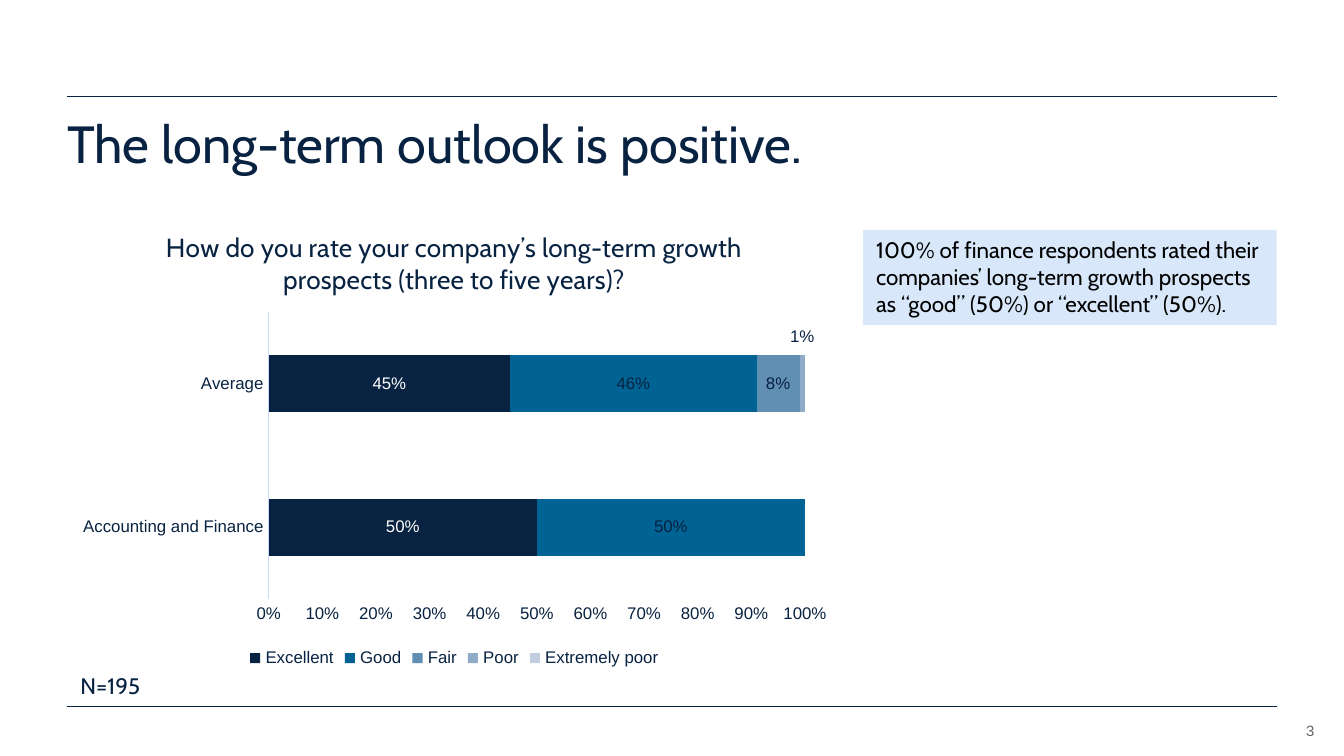
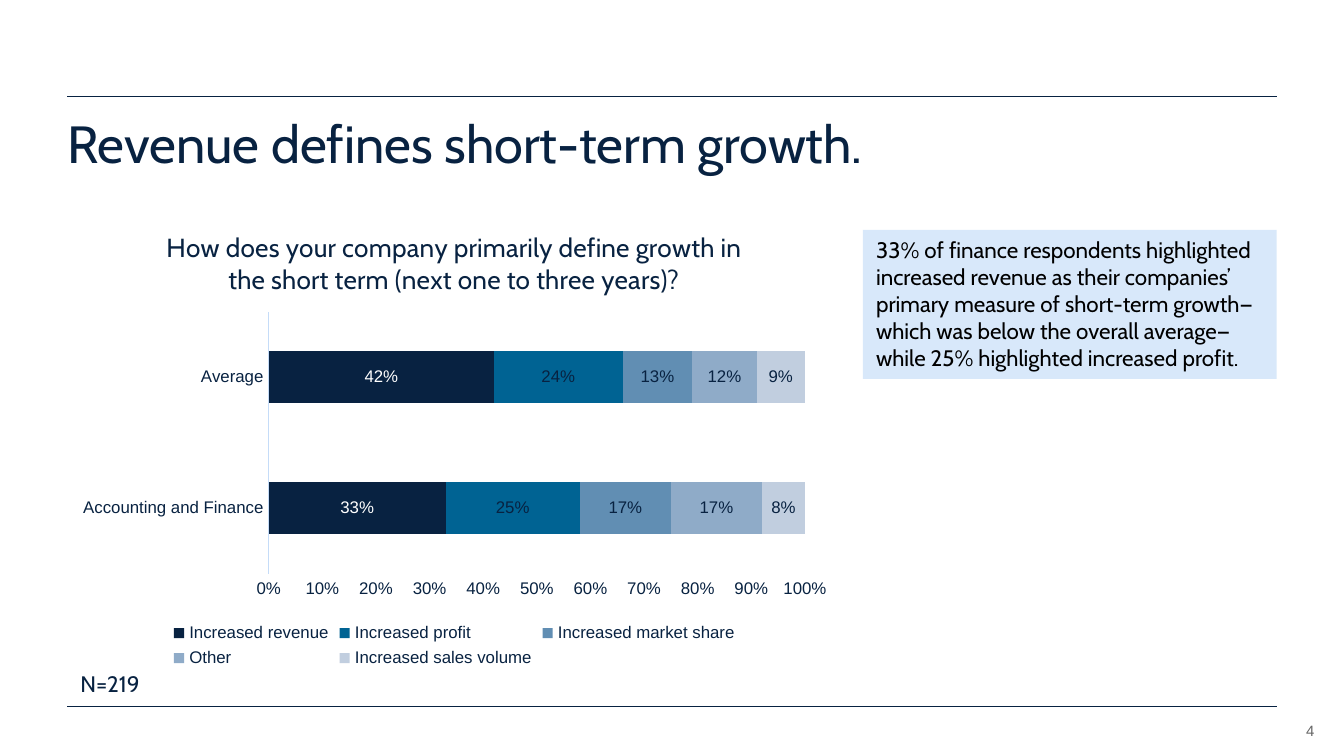
from dataclasses import dataclass

from lxml import etree
from pptx import Presentation
from pptx import util as u
from pptx.chart import data as chart_data
from pptx.dml.color import RGBColor
from pptx.enum import chart as ce
from pptx.enum import shapes, text
from pptx.oxml import parse_xml
from pptx.oxml.ns import nsdecls, qn


@dataclass(frozen=True)
class Theme:
    navy: str = "082241"
    white: str = "FFFFFF"
    black: str = "000000"
    grey: str = "666666"
    callout: str = "D8E8FA"
    axis: str = "C5DCF8"
    series: tuple = ("082241", "006393", "618EB3", "8FABC8", "C1CEDF")
    heading_font: str = "Cabin"
    label_font: str = "Arial"
    title_size: float = 28
    chart_title_size: float = 14
    body_size: float = 12
    chart_size: float = 10
    label_size: float = 9
    number_size: float = 8


THEME = Theme()
SLIDE_WIDTH = 10
SLIDE_HEIGHT = SLIDE_WIDTH * 9 / 16
LEFT, RIGHT = 0.5, 9.5
CHART_BOX = (LEFT, 1.55, 5.76, 3.46)
CATEGORIES = ("Accounting and Finance", "Average")

SLIDES = [
    dict(
        number=3,
        title="The long-term outlook is positive.",
        question="How do you rate your company’s long-term growth prospects (three to five years)?",
        series={
            "Excellent": (0.5, 0.45),
            "Good": (0.5, 0.46),
            "Fair": (None, 0.08),
            "Poor": (None, 0.01),
            "Extremely poor": (None, None),
        },
        plot_height=2.14,
        raised_label=("Poor", 1),
        callout="100% of finance respondents rated their companies’ long-term growth prospects "
                "as “good” (50%) or “excellent” (50%).",
        callout_height=0.71,
        sample="N=195",
        sample_top=4.95,
    ),
    dict(
        number=4,
        title="Revenue defines short-term growth.",
        question="How does your company primarily define growth in the short term "
                 "(next one to three years)?",
        series={
            "Increased revenue": (0.33, 0.42),
            "Increased profit": (0.25, 0.24),
            "Increased market share": (0.17, 0.13),
            "Other": (0.17, 0.12),
            "Increased sales volume": (0.08, 0.09),
        },
        plot_height=1.95,
        raised_label=None,
        callout="33% of finance respondents highlighted increased revenue as their companies’ "
                "primary measure of short-term growth—which was below the overall average—"
                "while 25% highlighted increased profit.",
        callout_height=1.11,
        sample="N=219",
        sample_top=4.94,
    ),
]


def inches(box):
    return [u.Inches(length) for length in box]


def rgb(color):
    return RGBColor.from_string(color)


def set_font(font, size=THEME.label_size, color=THEME.navy, name=THEME.label_font):
    font.size = u.Pt(size)
    font.bold = False
    font.name = name
    font.color.rgb = rgb(color)


def write_text(frame, content, size=THEME.body_size, color=THEME.navy,
               name=THEME.heading_font, align=text.PP_ALIGN.LEFT, line_spacing=None):
    paragraph = frame.paragraphs[0]
    paragraph.alignment = align
    paragraph.line_spacing = line_spacing
    run = paragraph.add_run()
    run.text = content
    set_font(run.font, size, color, name)


def set_frame(frame, anchor=text.MSO_ANCHOR.TOP, flush=False, grow=False):
    frame.word_wrap = True
    frame.vertical_anchor = anchor
    frame.auto_size = text.MSO_AUTO_SIZE.SHAPE_TO_FIT_TEXT if grow else text.MSO_AUTO_SIZE.NONE
    if flush:
        frame.margin_left = frame.margin_right = frame.margin_top = frame.margin_bottom = 0


def add_text_box(slide, box, content, anchor=text.MSO_ANCHOR.TOP, flush=False, grow=False, **style):
    frame = slide.shapes.add_textbox(*inches(box)).text_frame
    set_frame(frame, anchor, flush, grow)
    write_text(frame, content, **style)


def add_rule(slide, top):
    rule = slide.shapes.add_connector(
        shapes.MSO_CONNECTOR.STRAIGHT, *inches((LEFT, top, RIGHT, top)))
    rule.line.color.rgb = rgb(THEME.navy)
    rule.line.width = u.Pt(0.5)
    etree.SubElement(rule._element.spPr, qn("a:effectLst"))


def add_frame(slide, title, number):
    for top in (0.72, 5.26):
        add_rule(slide, top)
    add_text_box(slide, (9.31, 5.32, 0.47, 0.18), str(number), anchor=text.MSO_ANCHOR.BOTTOM,
                 flush=True, size=THEME.number_size, color=THEME.grey, name=THEME.label_font,
                 align=text.PP_ALIGN.RIGHT)
    heading = slide.shapes.title
    heading.left, heading.top, heading.width, heading.height = inches((LEFT, 0.88, RIGHT - LEFT, 0.55))
    set_frame(heading.text_frame, flush=True)
    write_text(heading.text_frame, title, size=THEME.title_size, line_spacing=0.9)


def manual_layout(**parts):
    values = "".join(f'<c:{part} val="{value}"/>' for part, value in parts.items())
    return parse_xml(
        f'<c:layout {nsdecls("c")}><c:manualLayout>{values}</c:manualLayout></c:layout>')


def place_plot(chart, box, left, top, width, height):
    plot_area = chart._chartSpace.find(".//" + qn("c:plotArea"))
    for layout in plot_area.findall(qn("c:layout")):
        plot_area.remove(layout)
    plot_area.insert(0, manual_layout(
        layoutTarget="inner", xMode="edge", yMode="edge",
        x=round(left / box[2], 4), y=round(top / box[3], 4),
        w=round(width / box[2], 4), h=round(height / box[3], 4)))


def format_axes(chart):
    for axis in (chart.category_axis, chart.value_axis):
        axis.has_major_gridlines = False
        axis.major_tick_mark = axis.minor_tick_mark = ce.XL_TICK_MARK.NONE
        set_font(axis.tick_labels.font)
    category_line = chart.category_axis.format.line
    category_line.color.rgb = rgb(THEME.axis)
    category_line.width = u.Pt(0.75)
    chart.value_axis.format.line.fill.background()
    chart.value_axis.tick_labels.number_format = "0%"
    chart.value_axis.tick_labels.number_format_is_linked = False


def format_series(chart):
    for index, (series, color) in enumerate(zip(chart.plots[0].series, THEME.series)):
        series.format.fill.solid()
        series.format.fill.fore_color.rgb = rgb(color)
        labels = series.data_labels
        labels.show_value = True
        labels.position = ce.XL_LABEL_POSITION.CENTER
        labels.number_format = "0%"
        labels.number_format_is_linked = False
        set_font(labels.font, color=THEME.navy if index else THEME.white)
        for leader in series._element.iter(qn("c:showLeaderLines")):
            leader.set("val", "0")


def raise_label(chart, series_name, point):
    series = next(item for item in chart.plots[0].series if item.name == series_name)
    label = series.points[point].data_label
    set_font(label.font)
    label.position = ce.XL_LABEL_POSITION.CENTER
    element = series._element.find(".//" + qn("c:dLbl"))
    element.find(qn("c:idx")).addnext(manual_layout(x=0, y=-0.1))


def add_rating_chart(slide, box, question, series, plot_height, raised_label):
    data = chart_data.CategoryChartData(number_format="0%")
    data.categories = CATEGORIES
    for name, values in series.items():
        data.add_series(name, values)
    chart = slide.shapes.add_chart(
        ce.XL_CHART_TYPE.BAR_STACKED_100, *inches(box), data).chart
    set_font(chart.font, THEME.chart_size)
    chart.has_title = True
    write_text(chart.chart_title.text_frame, question, size=THEME.chart_title_size,
               align=text.PP_ALIGN.CENTER)
    chart.has_legend = True
    chart.legend.position = ce.XL_LEGEND_POSITION.BOTTOM
    chart.legend.include_in_layout = False
    set_font(chart.legend.font)
    plot = chart.plots[0]
    plot.vary_by_categories = False
    plot.gap_width = 150
    plot.overlap = 100
    format_axes(chart)
    format_series(chart)
    if raised_label:
        raise_label(chart, *raised_label)
    place_plot(chart, box, 1.5, 0.77, 3.99, plot_height)


def add_callout(slide, box, content):
    callout = slide.shapes.add_shape(shapes.MSO_SHAPE.RECTANGLE, *inches(box))
    callout.shadow.inherit = False
    callout.fill.solid()
    callout.fill.fore_color.rgb = rgb(THEME.callout)
    callout.line.fill.background()
    set_frame(callout.text_frame, grow=True)
    write_text(callout.text_frame, content, color=THEME.black)


def add_survey_slide(presentation, content):
    slide = presentation.slides.add_slide(presentation.slide_layouts[5])
    add_frame(slide, content["title"], content["number"])
    add_callout(slide, (6.42, 1.71, 3.08, content["callout_height"]), content["callout"])
    add_rating_chart(slide, CHART_BOX, content["question"], content["series"],
                     content["plot_height"], content["raised_label"])
    add_text_box(slide, (LEFT, content["sample_top"], 1.04, 0.3), content["sample"], grow=True)


def main():
    presentation = Presentation()
    presentation.slide_width, presentation.slide_height = inches((SLIDE_WIDTH, SLIDE_HEIGHT))
    for content in SLIDES:
        add_survey_slide(presentation, content)
    presentation.save("out.pptx")


if __name__ == "__main__":
    main()
